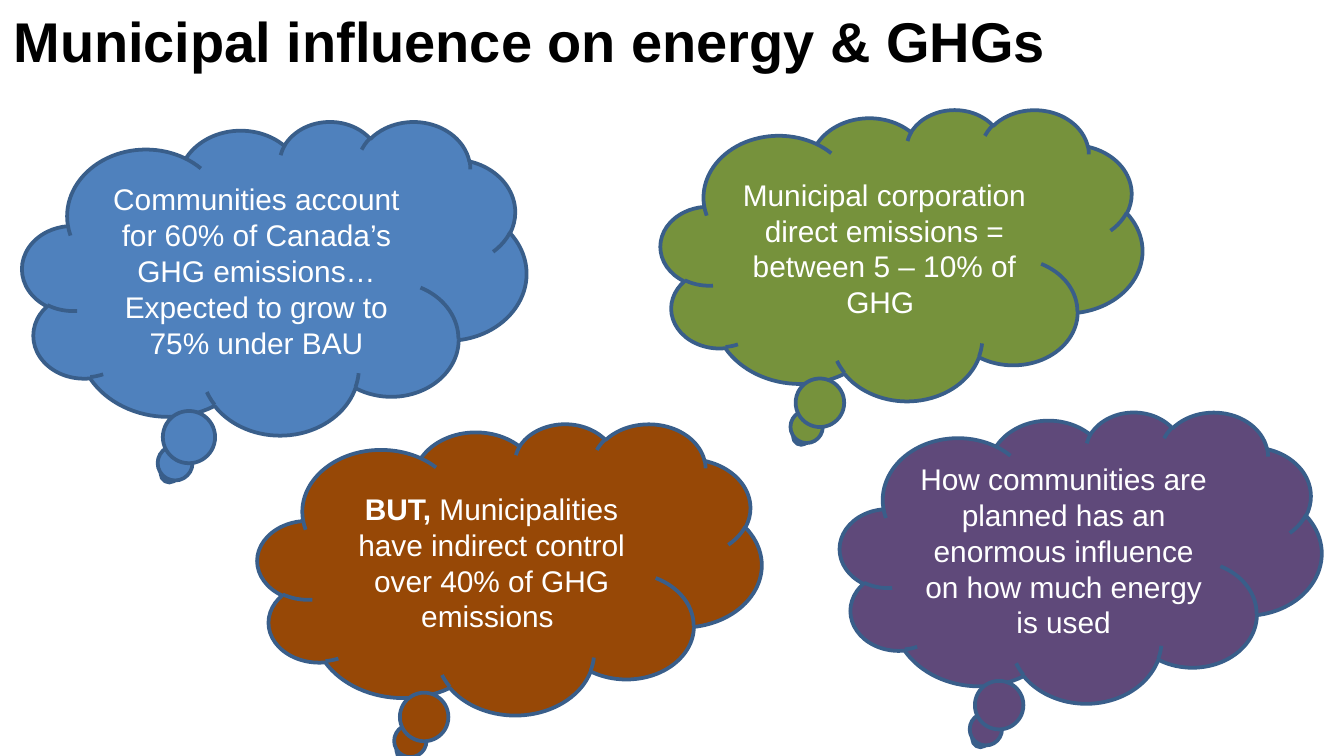
from pptx import Presentation
from pptx.dml.color import RGBColor
from pptx.enum.shapes import MSO_SHAPE
from pptx.enum.text import MSO_ANCHOR, PP_ALIGN
from pptx.util import Inches, Pt

COLORS = {
    "title": "000000",
    "text": "FFFFFF",
    "outline": "395E8A",
    "blue": "4F81BD",
    "purple": "5F497A",
    "green": "76923C",
    "brown": "974806",
}
CELL = Inches(1) / 12


def cells(*counts):
    return [round(count * CELL) for count in counts]


def style_run(run, size, color, bold):
    run.font.name = "Arial"
    run.font.size = Pt(size)
    run.font.bold = bold
    run.font.color.rgb = RGBColor.from_string(COLORS[color])


prs = Presentation()
prs.slide_width = Inches(10)
prs.slide_height = prs.slide_width * 9 // 16
slide = prs.slides.add_slide(prs.slide_layouts[5])

heading = slide.shapes.title
heading.left, heading.top, heading.width, heading.height = cells(0, 0, 120, 7.8)
heading.text_frame.text = "Municipal influence on energy & GHGs"
heading.text_frame.vertical_anchor = MSO_ANCHOR.TOP
heading.text_frame.paragraphs[0].alignment = PP_ALIGN.LEFT
style_run(heading.text_frame.paragraphs[0].runs[0], 30, "title", True)

thoughts = [
    (2, 10.8, 45, 28, "blue", "",
     "Communities account for 60% of Canada’s GHG emissions… Expected to grow to 75% under BAU"),
    (75, 36.75, 43, 26, "purple", "",
     "How communities are planned has an enormous influence on how much energy is used"),
    (59, 9.75, 43, 26, "green", "",
     "Municipal corporation direct emissions = between 5 – 10% of GHG "),
    (23, 37.8, 45, 26, "brown", "BUT, ",
     "Municipalities have indirect control over 40% of GHG emissions "),
]

for column, row, columns, rows, color, emphasis, message in thoughts:
    cloud = slide.shapes.add_shape(MSO_SHAPE.CLOUD_CALLOUT, *cells(column, row, columns, rows))
    cloud.shadow.inherit = False
    cloud.fill.solid()
    cloud.fill.fore_color.rgb = RGBColor.from_string(COLORS[color])
    cloud.line.color.rgb = RGBColor.from_string(COLORS["outline"])
    cloud.line.width = Pt(2)

    cloud.text_frame.word_wrap = True
    cloud.text_frame.vertical_anchor = MSO_ANCHOR.MIDDLE
    paragraph = cloud.text_frame.paragraphs[0]
    paragraph.alignment = PP_ALIGN.CENTER
    for wording, bold in ((emphasis, True), (message, False)):
        if wording:
            run = paragraph.add_run()
            run.text = wording
            style_run(run, 16, "text", bold)

prs.save("out.pptx")
